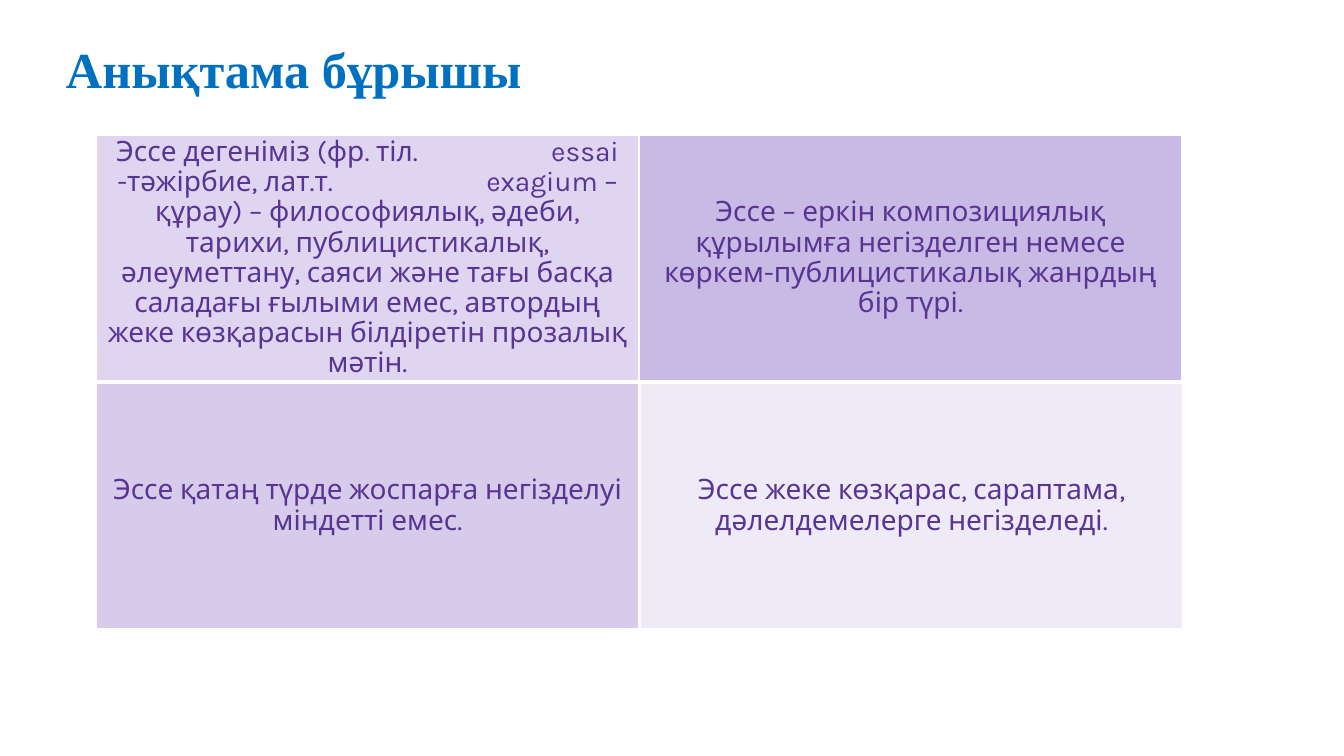
from lxml import etree
from pptx import Presentation
from pptx.dml.color import RGBColor
from pptx.enum.shapes import MSO_SHAPE
from pptx.enum.text import MSO_ANCHOR, PP_ALIGN
from pptx.oxml.ns import qn
from pptx.util import Pt

RECTANGLE = MSO_SHAPE.RECTANGLE
MIDDLE = MSO_ANCHOR.MIDDLE
LEFT, CENTER = PP_ALIGN.LEFT, PP_ALIGN.CENTER

COLORS = {
    "title": "0070C0",
    "body": "593593",
    "border": "FFFFFF",
    "definition": "DDD1EF",
    "composition": "BAA4DE",
    "plan": "C1ADE1",
    "argument": "E1D7F1",
}
TITLE = "Анықтама бұрышы"
# colour name, opacity in percent, text; two cells to a row
CELLS = [
    ("definition", 90,
     "Эссе дегеніміз (фр. тіл.\t\tessai -тәжірбие, лат.т.\texagium – құрау) – "
     "философиялық, әдеби, тарихи, публицистикалық, әлеуметтану, саяси және "
     "тағы басқа саладағы ғылыми емес, автордың жеке көзқарасын білдіретін "
     "прозалық мәтін."),
    ("composition", 77,
     "Эссе – еркін композициялық құрылымға негізделген немесе "
     "көркем-публицистикалық жанрдың бір түрі."),
    ("plan", 63, "Эссе қатаң түрде жоспарға негізделуі міндетті емес."),
    ("argument", 50,
     "Эссе жеке көзқарас, сараптама, дәлелдемелерге негізделеді."),
]

SLIDE_W, SLIDE_H = 1344, 756
TITLE_BOX = (56, 33, 1159, 79)
GRID_LEFT, GRID_TOP = 96, 135
CELL_W, CELL_H = 543, 246
COLUMN_GAPS = (0, 1)  # one for each row
ROW_GAP = 2
CELL_INSET = 8
WORD_TABS = (369, 435)  # exagium, essai


def px(length):
    return round(length * 914400 / 100.8)


def rgb(name):
    return RGBColor.from_string(COLORS[name])


def write(frame, text, font_name, size, color, align, bold=False):
    frame.word_wrap = True
    frame.vertical_anchor = MIDDLE
    paragraph = frame.paragraphs[0]
    paragraph.text = text
    paragraph.alignment = align
    paragraph.line_spacing = 0.9
    if "\t" in text:
        tabs = etree.SubElement(paragraph._p.get_or_add_pPr(), qn("a:tabLst"))
        for position in WORD_TABS:
            etree.SubElement(tabs, qn("a:tab"), pos=str(px(position)), algn="l")
    font = paragraph.font
    font.name, font.size, font.bold = font_name, Pt(size), bold
    font.color.rgb = rgb(color)


def add_cell(slide, index, color, opacity, text):
    row, column = divmod(index, 2)
    left = GRID_LEFT + column * (CELL_W + COLUMN_GAPS[row])
    top = GRID_TOP + row * (CELL_H + ROW_GAP)
    cell = slide.shapes.add_shape(
        RECTANGLE, px(left), px(top), px(CELL_W), px(CELL_H))
    cell.shadow.inherit = False
    cell.fill.solid()
    cell.fill.fore_color.rgb = rgb(color)
    fill_color = cell.fill._xPr.find(qn("a:solidFill"))[0]
    etree.SubElement(fill_color, qn("a:alpha"), val=str(opacity * 1000))
    cell.line.color.rgb = rgb("border")
    cell.line.width = Pt(1)
    frame = cell.text_frame
    frame.margin_left = frame.margin_right = px(CELL_INSET)
    frame.margin_top = frame.margin_bottom = px(CELL_INSET)
    write(frame, text, "Karla", 20, "body", CENTER)


def main():
    deck = Presentation()
    deck.slide_width, deck.slide_height = px(SLIDE_W), px(SLIDE_H)
    slide = deck.slides.add_slide(deck.slide_layouts[6])
    for index, (color, opacity, text) in enumerate(CELLS):
        add_cell(slide, index, color, opacity, text)
    title = slide.shapes.add_textbox(*map(px, TITLE_BOX))
    write(title.text_frame, TITLE, "Times New Roman", 36, "title", LEFT, True)
    deck.save("out.pptx")


if __name__ == "__main__":
    main()
